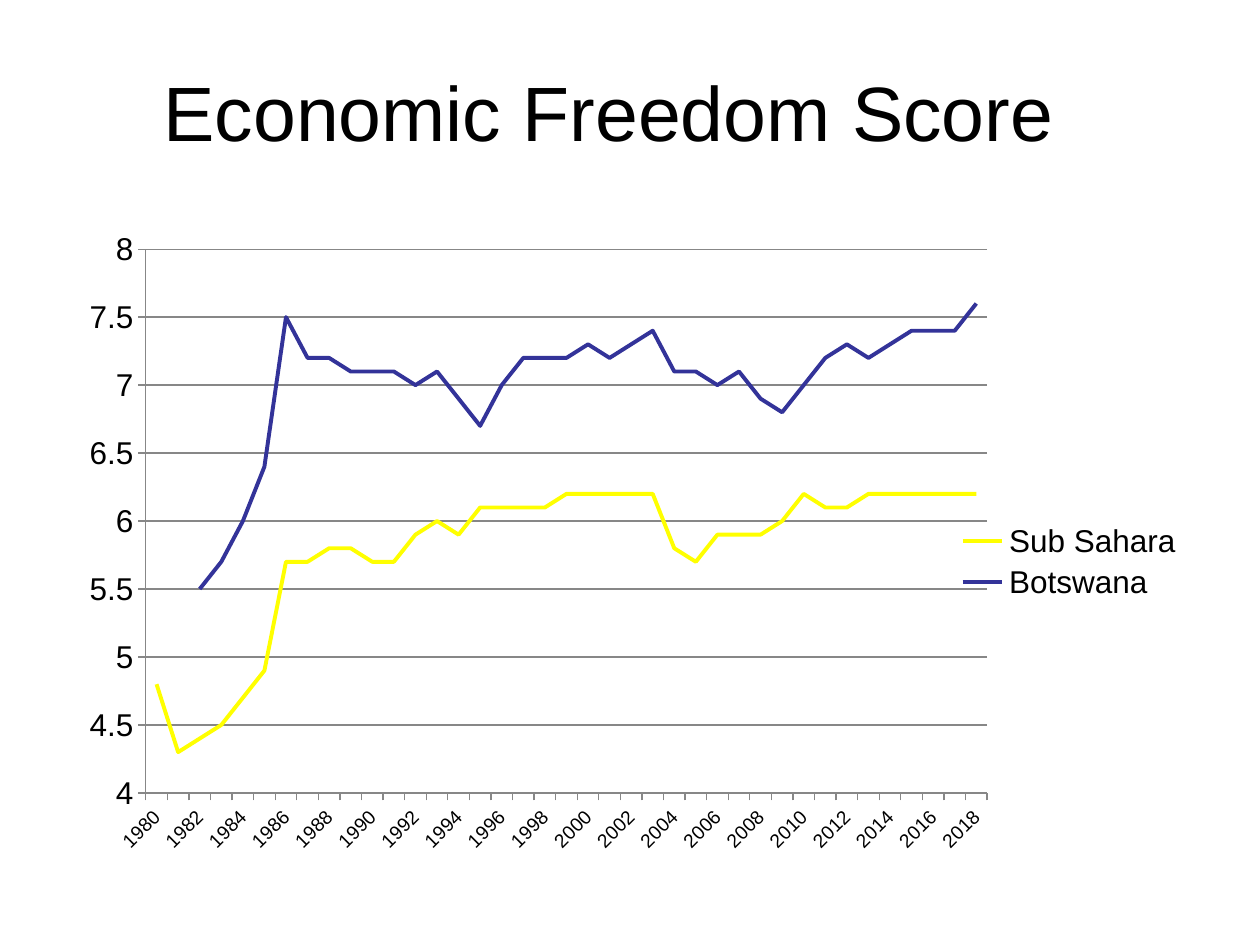
import pptx
import pptx.util
import pptx.chart.data
import pptx.dml.color
import pptx.enum.chart
import pptx.enum.text
import pptx.oxml
import pptx.oxml.ns

Pt = pptx.util.Pt
qn = pptx.oxml.ns.qn

SUB = [4.8, 4.3, 4.4, 4.5, 4.7, 4.9, 5.7, 5.7, 5.8, 5.8, 5.7, 5.7, 5.9,
       6, 5.9, 6.1, 6.1, 6.1, 6.1, 6.2, 6.2, 6.2, 6.2, 6.2, 5.8, 5.7,
       5.9, 5.9, 5.9, 6, 6.2, 6.1, 6.1, 6.2, 6.2, 6.2, 6.2, 6.2, 6.2]
BOTS = [None, None, 5.5, 5.7, 6, 6.4, 7.5, 7.2, 7.2, 7.1, 7.1, 7.1, 7,
        7.1, 6.9, 6.7, 7, 7.2, 7.2, 7.2, 7.3, 7.2, 7.3, 7.4, 7.1, 7.1,
        7, 7.1, 6.9, 6.8, 7, 7.2, 7.3, 7.2, 7.3, 7.4, 7.4, 7.4, 7.6]
YEARS = [str(year) for year in range(1980, 2019)]


def color(code):
    return pptx.dml.color.RGBColor.from_string(code)


def place(node, mark, box, size, inner=False):
    for old in node.findall(qn("c:layout")):
        node.remove(old)
    target = '<c:layoutTarget val="inner"/>' if inner else ""
    modes = "".join(f'<c:{side}Mode val="edge"/>' for side in "xy")
    parts = "".join(f'<c:{key} val="{val / full:.4f}"/>'
                    for key, val, full in zip("xywh", box, size * 2))
    layout = pptx.oxml.parse_xml(
        f'<c:layout {pptx.oxml.ns.nsdecls("c")}><c:manualLayout>'
        f"{target}{modes}{parts}</c:manualLayout></c:layout>")
    node.find(qn(mark)).addprevious(layout)


class Deck:
    face = "Arial"
    ink = "000000"
    rule = "878787"

    def __init__(self):
        self.file = pptx.Presentation()
        self.file.slide_width, self.file.slide_height = Pt(720), Pt(540)
        self.slide = self.file.slides.add_slide(self.file.slide_layouts[5])

    def style(self, font, size):
        font.name, font.size = self.face, Pt(size)
        font.color.rgb = color(self.ink)

    def title(self, text, left, top, width, height):
        shape = self.slide.shapes.title
        shape.left, shape.top = Pt(left), Pt(top)
        shape.width, shape.height = Pt(width), Pt(height)
        frame = shape.text_frame
        frame.text = text
        frame.vertical_anchor = pptx.enum.text.MSO_ANCHOR.MIDDLE
        line = frame.paragraphs[0]
        line.alignment = pptx.enum.text.PP_ALIGN.CENTER
        self.style(line.font, 44)

    def axis(self, axis, size):
        marks = pptx.enum.chart.XL_TICK_MARK
        axis.major_tick_mark = marks.OUTSIDE
        axis.minor_tick_mark = marks.NONE
        axis.format.line.color.rgb = color(self.rule)
        axis.format.line.width = Pt(0.75)
        self.style(axis.tick_labels.font, size)

    def chart(self, years, rows, left, top, width, height):
        data = pptx.chart.data.CategoryChartData()
        data.categories = years
        for name, vals, code in rows:
            data.add_series(name, vals)
        chart = self.slide.shapes.add_chart(
            pptx.enum.chart.XL_CHART_TYPE.LINE,
            Pt(left), Pt(top), Pt(width), Pt(height), data).chart
        chart.has_title = False
        self.style(chart.font, 18)
        chart.plots[0].vary_by_categories = False
        for line, (name, vals, code) in zip(chart.plots[0].series, rows):
            line.smooth = False
            line.marker.style = pptx.enum.chart.XL_MARKER_STYLE.NONE
            line.format.line.color.rgb = color(code)
            line.format.line.width = Pt(2.25)

        score = chart.value_axis
        self.axis(score, 18)
        score.minimum_scale, score.maximum_scale = 4, 8
        score.major_unit = 0.5
        score.has_major_gridlines = True
        grid = score.major_gridlines.format.line
        grid.color.rgb, grid.width = color(self.rule), Pt(0.75)

        self.axis(chart.category_axis, 11)
        root = chart.element
        years_axis = next(root.iter(qn("c:catAx")))
        next(years_axis.iter(qn("a:bodyPr"))).set("rot", "-2700000")
        skip = pptx.oxml.parse_xml(
            f'<c:tickLblSkip {pptx.oxml.ns.nsdecls("c")} val="2"/>')
        years_axis.find(qn("c:noMultiLvlLbl")).addprevious(skip)

        chart.has_legend = True
        chart.legend.position = pptx.enum.chart.XL_LEGEND_POSITION.RIGHT
        chart.legend.include_in_layout = False
        self.style(chart.legend.font, 18)
        size = (width, height)
        place(next(root.iter(qn("c:plotArea"))), "c:lineChart",
              (47.3, 16.4, 480.8, 310.8), size, True)
        place(next(root.iter(qn("c:legend"))), "c:overlay",
              (510, 170, 130, 50), size)


def main():
    deck = Deck()
    deck.title("Economic Freedom Score", 24, 18, 648, 90)
    rows = [("Sub Sahara", SUB, "FFFF00"), ("Botswana", BOTS, "333399")]
    deck.chart(YEARS, rows, 36, 126, 648, 390)
    deck.file.save("out.pptx")


if __name__ == "__main__":
    main()
